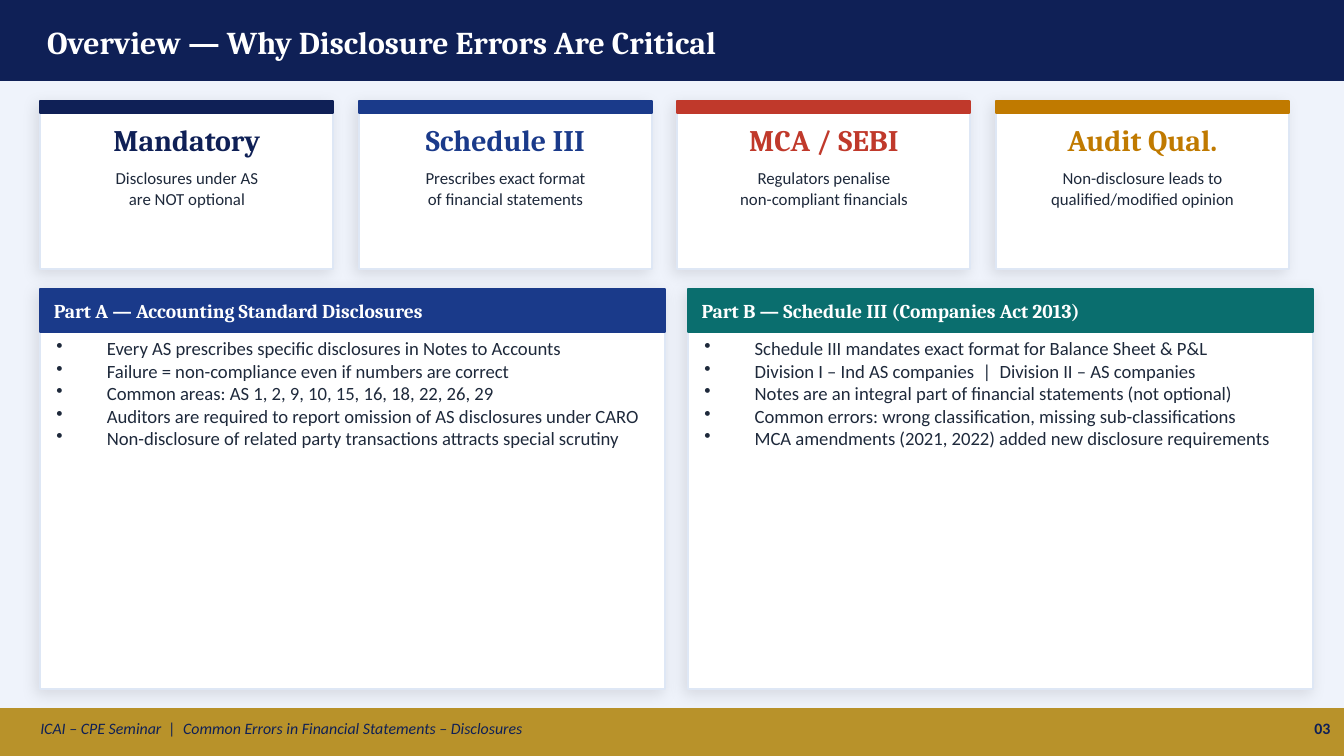
"""Build the overview slide on why disclosure errors are critical."""
from lxml.etree import SubElement
from pptx import Presentation
from pptx.dml.color import RGBColor
from pptx.enum.shapes import MSO_SHAPE
from pptx.enum.text import MSO_ANCHOR, MSO_AUTO_SIZE, PP_ALIGN
from pptx.oxml.ns import qn
from pptx.util import Inches, Pt

HUES = {
    "page": "EFF3FB", "navy": "0F2056", "gold": "B8922A", "white": "FFFFFF",
    "edge": "DEE7F5", "blue": "1A3A8A", "red": "C0392B", "amber": "C07A00",
    "teal": "0A6E6E", "ink": "1E293B", "black": "000000",
}
TITLE = "Overview — Why Disclosure Errors Are Critical"
CARDS = [
    ("Mandatory", "navy", ["Disclosures under AS", "are NOT optional"]),
    ("Schedule III", "blue", ["Prescribes exact format", "of financial statements"]),
    ("MCA / SEBI", "red", ["Regulators penalise", "non-compliant financials"]),
    ("Audit Qual.", "amber", ["Non-disclosure leads to", "qualified/modified opinion"]),
]
PARTS = [
    ("Part A — Accounting Standard Disclosures", "blue", [
        "Every AS prescribes specific disclosures in Notes to Accounts",
        "Failure = non-compliance even if numbers are correct",
        "Common areas: AS 1, 2, 9, 10, 15, 16, 18, 22, 26, 29",
        "Auditors are required to report omission of AS disclosures under CARO",
        "Non-disclosure of related party transactions attracts special scrutiny",
    ]),
    ("Part B — Schedule III (Companies Act 2013)", "teal", [
        "Schedule III mandates exact format for Balance Sheet & P&L",
        "Division I – Ind AS companies  |  Division II – AS companies",
        "Notes are an integral part of financial statements (not optional)",
        "Common errors: wrong classification, missing sub-classifications",
        "MCA amendments (2021, 2022) added new disclosure requirements",
    ]),
]
FOOTER = "ICAI – CPE Seminar  |  Common Errors in Financial Statements – Disclosures"
NUMBER = "03"
WIDE = 10
HIGH = WIDE * 9 / 16
LEFT = 0.3
INDENT = Inches(3 / 8)


def color(name):
    return RGBColor.from_string(HUES[name])


def rect(slide, x, y, w, h, fill, line=None):
    box = slide.shapes.add_shape(
        MSO_SHAPE.RECTANGLE, Inches(x), Inches(y), Inches(w), Inches(h))
    box.shadow.inherit = False
    box.fill.solid()
    box.fill.fore_color.rgb = color(fill)
    box.line.color.rgb = color(line or fill)
    box.line.width = Pt(1)
    return box


def panel(slide, x, y, w, h):
    box = rect(slide, x, y, w, h, "white", "edge")
    effects = box._element.spPr.find(qn("a:effectLst"))
    shade = SubElement(
        effects, qn("a:outerShdw"), blurRad=str(Pt(8)), dist=str(Pt(3)),
        dir=str(135 * 60000), algn="bl", rotWithShape="0")
    tone = SubElement(shade, qn("a:srgbClr"), val=HUES["black"])
    SubElement(tone, qn("a:alpha"), val="10000")


def bullet(para):
    props = para._p.get_or_add_pPr()
    props.set("marL", str(INDENT))
    props.set("indent", str(-INDENT))
    SubElement(props, qn("a:buSzPct"), val="100000")
    SubElement(props, qn("a:buChar"), char="•")


def write(box, lines, size, face, hue, align=PP_ALIGN.LEFT, middle=True,
          bold=False, italic=False, dots=False):
    frame = box.text_frame
    frame.word_wrap = True
    frame.auto_size = MSO_AUTO_SIZE.NONE
    frame.margin_left = frame.margin_right = 0
    frame.margin_top = frame.margin_bottom = 0
    frame.vertical_anchor = MSO_ANCHOR.MIDDLE if middle else MSO_ANCHOR.TOP
    for i, line in enumerate(lines):
        para = frame.add_paragraph() if i else frame.paragraphs[0]
        para.alignment = align
        if dots:
            bullet(para)
        run = para.add_run()
        run.text = line
        font = run.font
        font.size, font.name = Pt(size), face
        font.bold, font.italic = bold, italic
        font.color.rgb = color(hue)


def text(slide, x, y, w, h, *args, **style):
    box = slide.shapes.add_textbox(Inches(x), Inches(y), Inches(w), Inches(h))
    write(box, *args, **style)


def head(slide):
    rect(slide, 0, 0, WIDE, HIGH, "page")
    rect(slide, 0, 0, WIDE, 0.6, "navy")
    rect(slide, 0, HIGH - 0.35, WIDE, 0.35, "gold")
    title = slide.shapes.title
    title.left, title.top = Inches(0.35), Inches(0.08)
    title.width, title.height = Inches(9.3), Inches(0.46)
    write(title, [TITLE], 17, "Cambria", "white", bold=True)
    slide.shapes._spTree.append(title._element)


def cards(slide):
    y, w, step = 0.75, 2.18, 2.37
    for i, (name, hue, lines) in enumerate(CARDS):
        x = LEFT + i * step
        panel(slide, x, y, w, 1.25)
        rect(slide, x, y, w, 0.09, hue)
        text(slide, x, y + 0.05, w, 0.48, [name], 16, "Cambria", hue,
             align=PP_ALIGN.CENTER, bold=True)
        text(slide, x, y + 0.5, w, 0.65, lines, 9, "Calibri", "ink",
             align=PP_ALIGN.CENTER, middle=False)


def parts(slide):
    y, w, step = 2.15, 4.65, 4.82
    for i, (name, hue, lines) in enumerate(PARTS):
        x = LEFT + i * step
        panel(slide, x, y, w, 2.98)
        rect(slide, x, y, w, 0.32, hue)
        text(slide, x + 0.1, y + 0.02, w - 0.2, 0.28, [name], 10.5,
             "Cambria", "white", bold=True)
        text(slide, x + 0.12, y + 0.36, w - 0.2, 2.55, lines, 10,
             "Calibri", "ink", middle=False, dots=True)


def foot(slide):
    y, h = HIGH - 0.34, 0.27
    text(slide, LEFT, y, 8.8, h, [FOOTER], 8.5, "Calibri", "navy",
         italic=True)
    text(slide, 9.5, y, 0.4, h, [NUMBER], 8.5, "Calibri", "navy",
         align=PP_ALIGN.RIGHT, bold=True)


def main():
    deck = Presentation()
    deck.slide_width, deck.slide_height = Inches(WIDE), Inches(HIGH)
    slide = deck.slides.add_slide(deck.slide_layouts[5])
    head(slide)
    cards(slide)
    parts(slide)
    foot(slide)
    deck.save("out.pptx")


if __name__ == "__main__":
    main()
